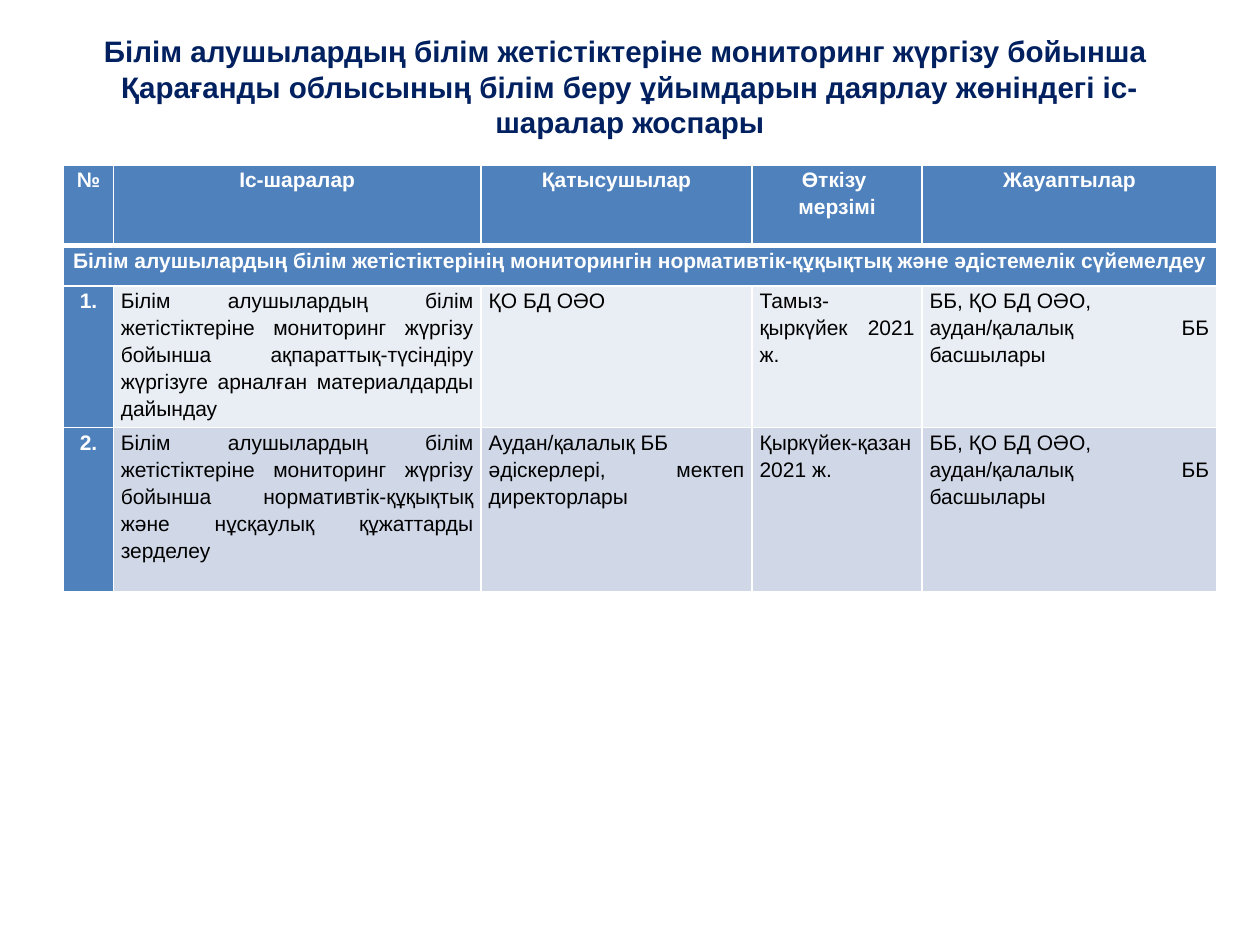
from lxml import etree
from pptx import Presentation
from pptx.dml.color import RGBColor
from pptx.enum.text import MSO_ANCHOR, MSO_AUTO_SIZE, PP_ALIGN
from pptx.oxml.ns import qn
from pptx.util import Pt

CENTER, JUSTIFY = PP_ALIGN.CENTER, PP_ALIGN.JUSTIFY
MIDDLE, TOP = MSO_ANCHOR.MIDDLE, MSO_ANCHOR.TOP
NO_AUTOFIT = MSO_AUTO_SIZE.NONE

NAVY, BLUE, WHITE, BLACK = "002060", "4F81BD", "FFFFFF", "000000"
BAND_FILLS = ["E9EDF4", "D0D8E8"]


def add_run(paragraph, text, size, color, bold):
    run = paragraph.add_run()
    run.text = text
    run.font.name = "Arial"
    run.font.size = Pt(size)
    run.font.bold = bold
    run.font.color.rgb = RGBColor.from_string(color)


def add_border(cell, side, width):
    """Add a white border; must run before the cell gets its fill."""
    line = etree.SubElement(cell._tc.get_or_add_tcPr(), qn(f"a:ln{side}"), w=str(Pt(width)))
    fill = etree.SubElement(line, qn("a:solidFill"))
    etree.SubElement(fill, qn("a:srgbClr"), val=WHITE)


prs = Presentation()
prs.slide_width, prs.slide_height = Pt(720), Pt(540)
slide = prs.slides.add_slide(prs.slide_layouts[5])

title = slide.shapes.title
title.left, title.top, title.width, title.height = Pt(36), Pt(21.6), Pt(648), Pt(55.4)
title_frame = title.text_frame
title_frame.auto_size = NO_AUTOFIT
title_frame.word_wrap = True
title_frame.vertical_anchor = MIDDLE
heading = title_frame.paragraphs[0]
heading.alignment = CENTER
add_run(heading, "Білім алушылардың білім жетістіктеріне мониторинг жүргізу бойынша ", 16.9, NAVY, True)
heading.add_line_break()
add_run(heading, "Қарағанды облысының білім беру ұйымдарын даярлау жөніндегі іс-шаралар жоспары",
        16.9, NAVY, True)

# Each line within a cell is a paragraph of its own.
responsible = "ББ, ҚО БД ОӘО,\nаудан/қалалық ББ басшылары "
plan = [
    ["№", "Іс-шаралар", "Қатысушылар", "Өткізу \nмерзімі", "Жауаптылар"],
    ["Білім алушылардың білім жетістіктерінің мониторингін нормативтік-құқықтық "
     "және әдістемелік сүйемелдеу", "", "", "", ""],
    ["1.",
     "Білім алушылардың білім жетістіктеріне мониторинг жүргізу бойынша "
     "ақпараттық-түсіндіру жүргізуге арналған материалдарды дайындау ",
     "ҚО БД ОӘО", "Тамыз-қыркүйек 2021 ж.", responsible],
    ["2.",
     "Білім алушылардың білім жетістіктеріне мониторинг жүргізу бойынша "
     "нормативтік-құқықтық және нұсқаулық құжаттарды зерделеу",
     "Аудан/қалалық ББ\nәдіскерлері, мектеп директорлары", "Қыркүйек-қазан 2021 ж.", responsible],
]
column_widths = [28.4, 210.2, 154.8, 97.2, 168.4]
row_heights = [46, 23, 81, 93.6]

table = slide.shapes.add_table(len(plan), len(column_widths), Pt(36.4), Pt(94.4),
                               Pt(sum(column_widths)), Pt(sum(row_heights))).table
table.first_row = table.horz_banding = False
for column, width in zip(table.columns, column_widths):
    column.width = Pt(width)
for row, height in zip(table.rows, row_heights):
    row.height = Pt(height)
table.cell(1, 0).merge(table.cell(1, 4))

for r, entries in enumerate(plan):
    for c, entry in enumerate(entries):
        cell = table.cell(r, c)
        is_heading = r < 2 or c == 0
        cell.margin_left = cell.margin_right = Pt(4.3)
        cell.margin_top = cell.margin_bottom = 0
        cell.vertical_anchor = TOP
        borders = {"L": 1, "R": 1, "T": 3 if r == 1 else 1, "B": 3 if r == 0 else 1}
        for side, width in borders.items():
            add_border(cell, side, width)
        cell.fill.solid()
        cell.fill.fore_color.rgb = RGBColor.from_string(BLUE if is_heading else BAND_FILLS[r - 2])
        if cell.is_spanned:
            continue
        for i, line in enumerate(entry.split("\n")):
            paragraph = cell.text_frame.add_paragraph() if i else cell.text_frame.paragraphs[0]
            paragraph.alignment = CENTER if is_heading else JUSTIFY
            paragraph.line_spacing = 1.15
            add_run(paragraph, line, 12, WHITE if is_heading else BLACK, is_heading)

prs.save("out.pptx")
